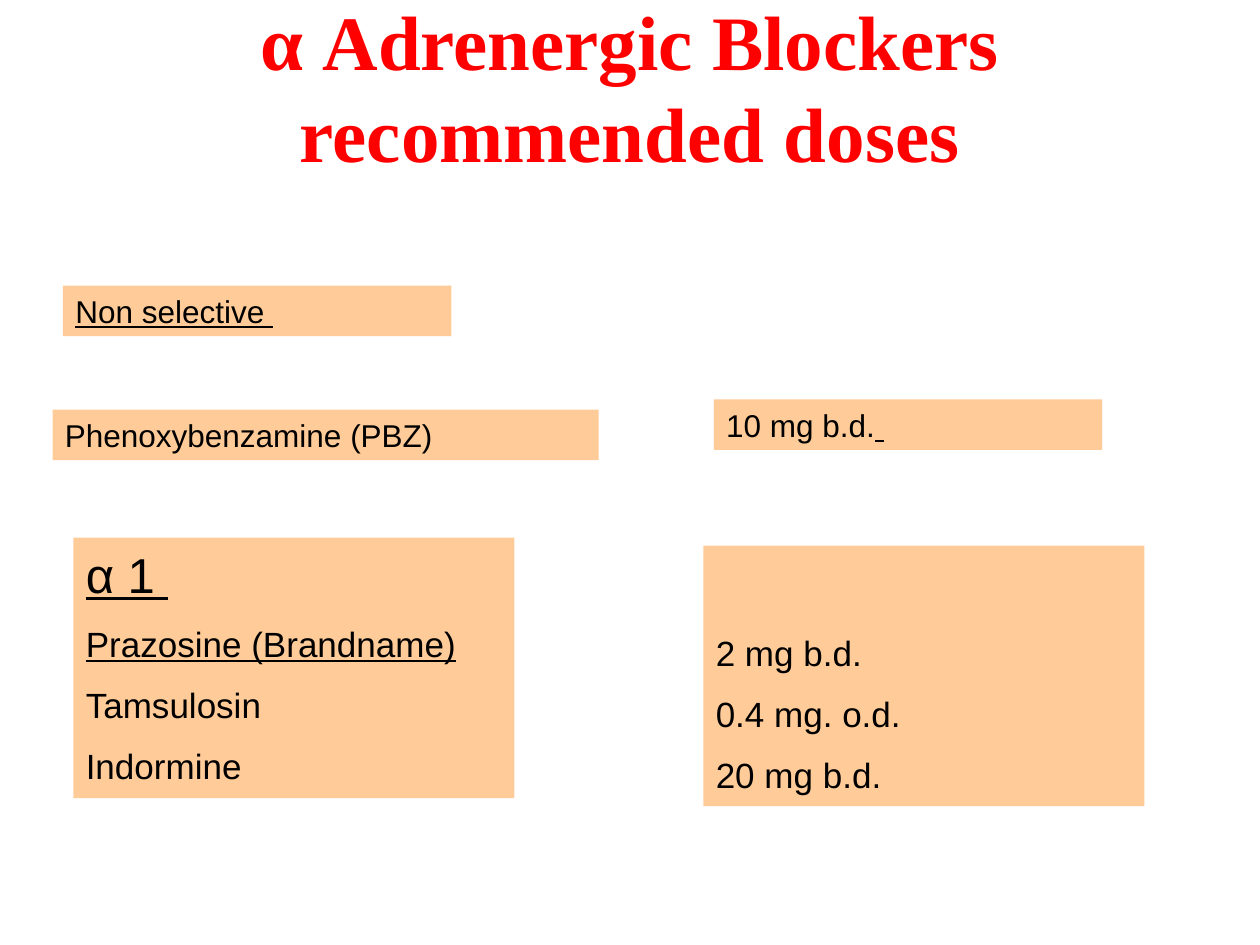
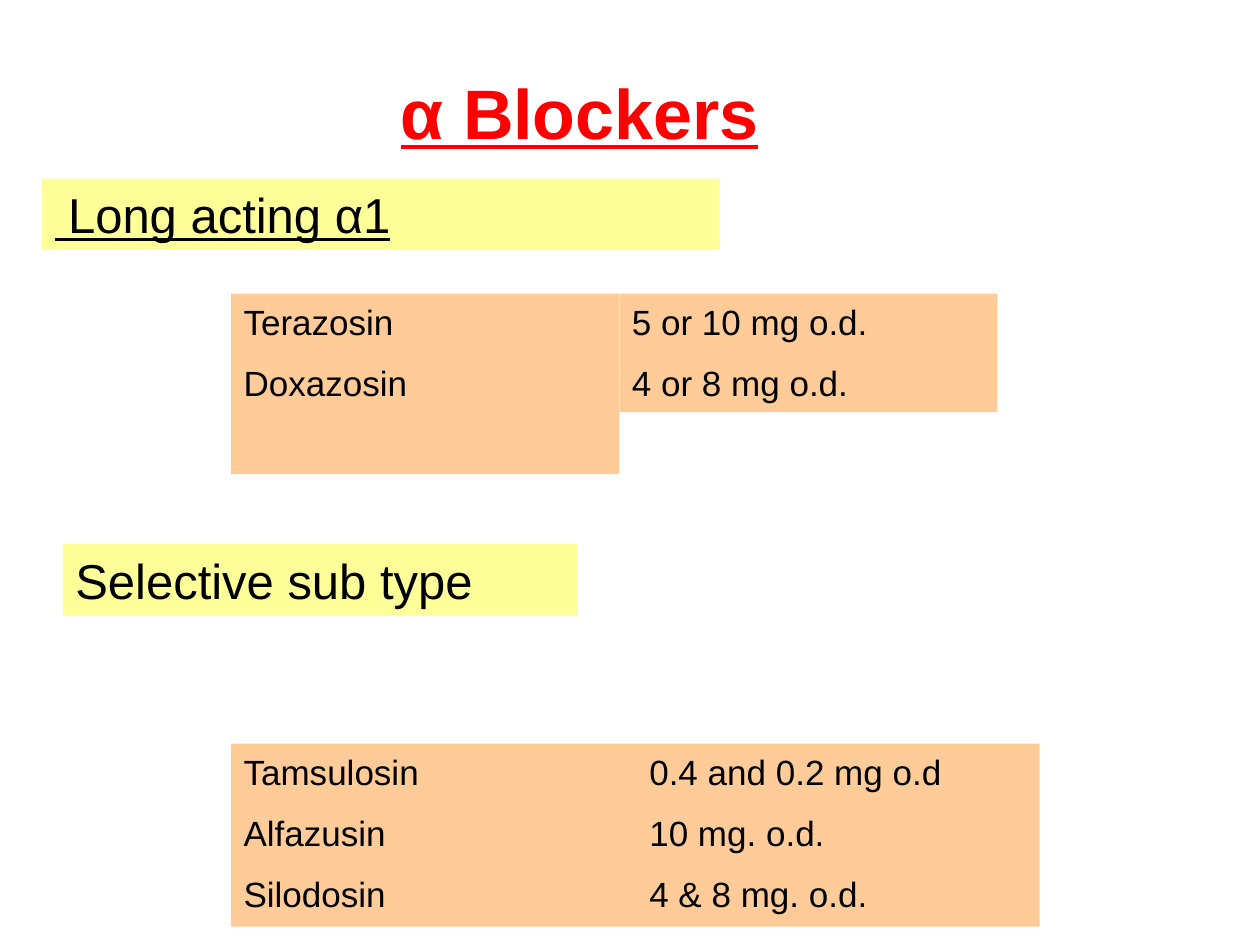
from dataclasses import dataclass
from typing import Optional

from lxml.etree import SubElement
from pptx import Presentation
from pptx.dml.color import RGBColor
from pptx.enum.shapes import MSO_SHAPE
from pptx.enum.text import MSO_ANCHOR, PP_ALIGN
from pptx.oxml.ns import qn
from pptx.util import Cm, Pt

PEACH, LEMON, RED, BLACK = "FFCC99", "FFFF99", "FF0000", "000000"
SANS, SERIF = "Arial", "Times New Roman"


@dataclass
class Run:
    """A stretch of text in one style."""
    text: str
    size: int = 20
    under: bool = False
    bold: bool = False
    tint: str = BLACK
    font: str = SANS


@dataclass
class Box:
    """A block of text, placed in centimetres."""
    left: float
    top: float
    width: float
    height: float
    lines: list[list[Run]]
    fill: Optional[str] = PEACH
    inset: float = 0.13
    foot: float = 0.13
    tab: Optional[float] = None
    wrap: bool = True
    align: PP_ALIGN = PP_ALIGN.LEFT
    anchor: MSO_ANCHOR = MSO_ANCHOR.TOP


def color(code: str) -> RGBColor:
    """Turn a hex string into a colour."""
    return RGBColor.from_string(code)


def rows(*texts: str) -> list[list[Run]]:
    """Make one plain line for each text."""
    return [[Run(text)] for text in texts]


def draw(slide, box: Box) -> None:
    """Draw one box with its lines."""
    place = [Cm(n) for n in (box.left, box.top, box.width, box.height)]
    if box.fill:
        shape = slide.shapes.add_shape(MSO_SHAPE.RECTANGLE, *place)
        shape.shadow.inherit = False
        shape.fill.solid()
        shape.fill.fore_color.rgb = color(box.fill)
        shape.line.fill.background()
    else:
        shape = slide.shapes.add_textbox(*place)
    frame = shape.text_frame
    frame.word_wrap = box.wrap
    frame.vertical_anchor = box.anchor
    frame.margin_top, frame.margin_bottom = Cm(box.inset), Cm(box.foot)
    for num, line in enumerate(box.lines):
        para = frame.add_paragraph() if num else frame.paragraphs[0]
        para.alignment = box.align
        if num:
            para.space_before = Pt(11)
        if box.tab:
            stops = SubElement(para._p.get_or_add_pPr(), qn("a:tabLst"))
            SubElement(stops, qn("a:tab"), pos=str(Cm(box.tab)), algn="l")
        for part in line:
            run = para.add_run()
            run.text = part.text
            font = run.font
            font.name, font.size = part.font, Pt(part.size)
            font.bold, font.underline = part.bold, part.under
            font.color.rgb = color(part.tint)


DOSES = [
    Box(1.9, 0.85, 21.6, 3.38,
        [[Run("α Adrenergic Blockers recommended doses", 44,
              bold=True, tint=RED, font=SERIF)]],
        fill=None, foot=1.75, align=PP_ALIGN.CENTER,
        anchor=MSO_ANCHOR.MIDDLE),
    Box(1.27, 5.76, 7.83, 1.02, [[Run("Non selective ", 18, under=True)]]),
    Box(14.39, 8.05, 7.83, 1.02,
        [[Run("10 mg b.d.", 18), Run(" ", 18, under=True)]]),
    Box(1.06, 8.26, 11.01, 1.02, [[Run("Phenoxybenzamine (PBZ)", 18)]]),
    Box(1.48, 10.84, 8.89, 5.25,
        [[Run("α 1 ", 28, under=True)],
         [Run("Prazosine (Brandname)", under=True)],
         *rows("Tamsulosin", "Indormine")]),
    Box(14.18, 11, 8.89, 5.25,
        rows("2 mg b.d.", "0.4 mg. o.d.", "20 mg b.d."), inset=1.73),
]

TYPES = [
    Box(0.85, 3.6, 13.66, 1.44,
        [[Run(" Long acting α1", 28, under=True)]], fill=LEMON),
    Box(4.66, 5.92, 7.83, 3.64, rows("Terazosin", "Doxazosin")),
    Box(12.49, 5.92, 7.62, 2.39,
        rows("5 or 10 mg o.d.", "4 or 8 mg o.d.")),
    Box(1.27, 10.97, 10.37, 1.44,
        [[Run("Selective sub type", 28)]], fill=LEMON),
    Box(4.66, 14.99, 16.3, 3.69,
        rows("Tamsulosin\t0.4 and 0.2 mg o.d", "Alfazusin\t10 mg. o.d.",
             "Silodosin\t4 & 8 mg. o.d."), tab=8.18),
    Box(7.83, 1.27, 7.74, 1.96,
        [[Run("α Blockers", 40, under=True, bold=True, tint=RED)]],
        fill=None, wrap=False),
]


def main() -> None:
    """Build both slides and save them."""
    deck = Presentation()
    deck.slide_width, deck.slide_height = Cm(25.4), Cm(19.05)
    for page in (DOSES, TYPES):
        slide = deck.slides.add_slide(deck.slide_layouts[6])
        for box in page:
            draw(slide, box)
    deck.save("out.pptx")


if __name__ == "__main__":
    main()
